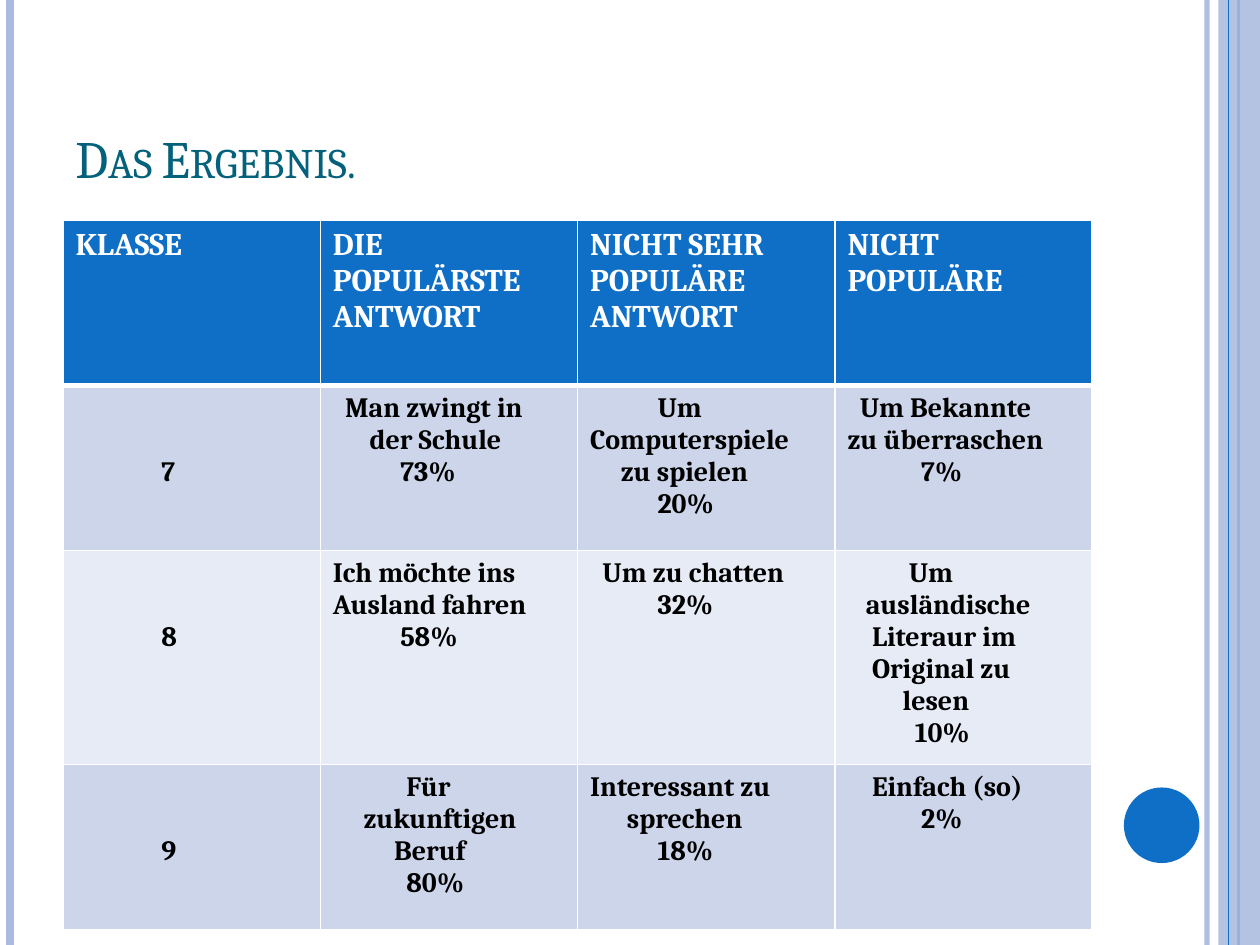
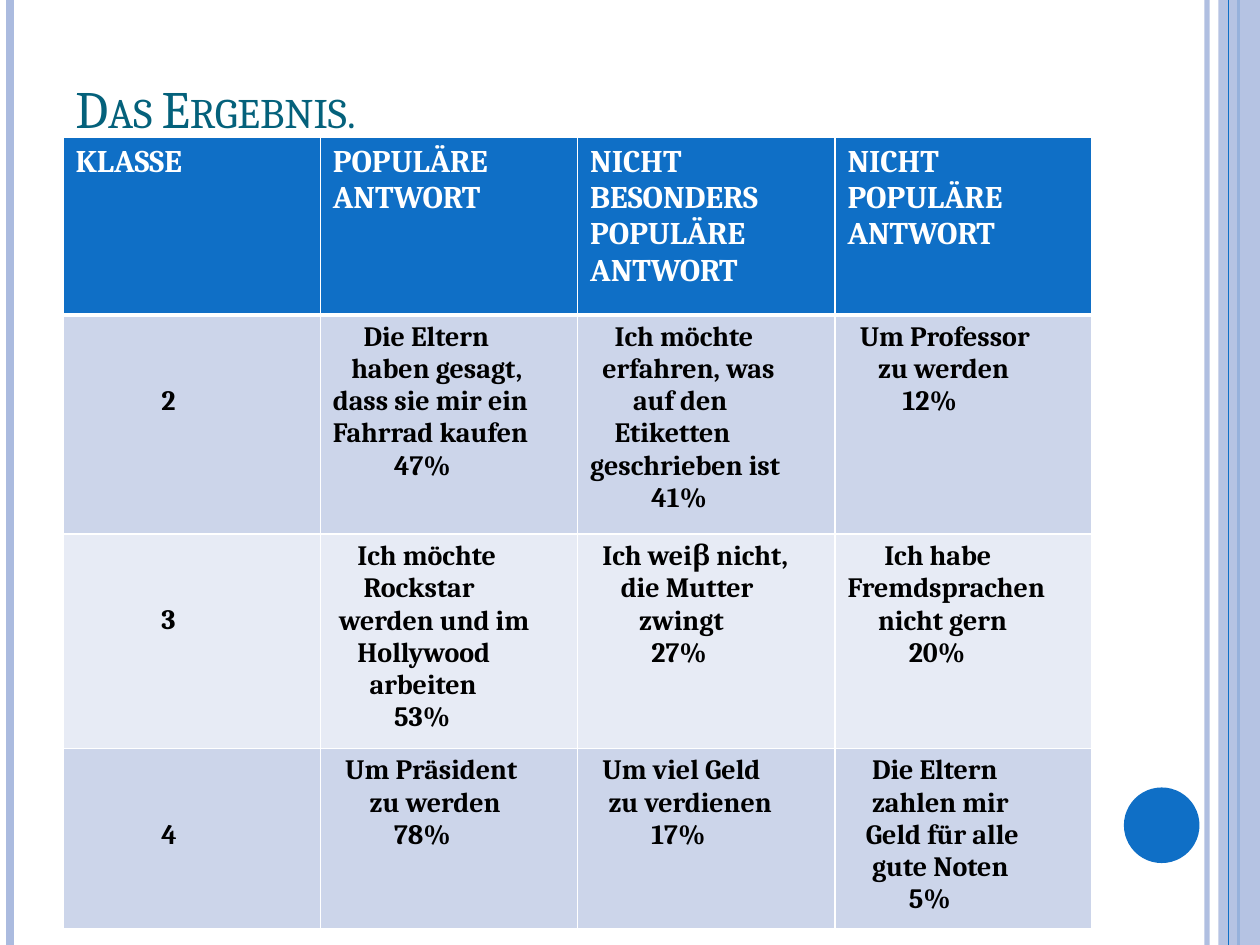
from lxml import etree
from pptx import Presentation
from pptx.dml.color import RGBColor
from pptx.enum.shapes import MSO_CONNECTOR, MSO_SHAPE
from pptx.enum.text import MSO_ANCHOR
from pptx.oxml.ns import qn
from pptx.util import Inches, Pt

STRAIGHT = MSO_CONNECTOR.STRAIGHT
RECTANGLE, OVAL = MSO_SHAPE.RECTANGLE, MSO_SHAPE.OVAL
BOTTOM = MSO_ANCHOR.BOTTOM

COLORS = {
    "blue": "0F6FC6", "pale_blue": "ABBBDF", "title": "04617B",
    "white": "FFFFFF", "black": "000000", "band_dark": "CCD5EA", "band_light": "E7EBF5",
}
FONT = "Cambria"
TITLE = "Das Ergebnis."
SLIDE_W, SLIDE_H = 10, 7.5
LEFT, CONTENT_W, TITLE_TOP = 0.5, 8.17, 0.3
INDENT_STEP = 3.5
GRADE_INDENT, GRADE_MARGIN_TOP = 14, 0.56

# Each answer line is (indent steps, text).
RESULTS = [
    {
        "title_height": 1.25,
        "table_top": 1.75,
        "row_heights": [1.31, 1.31, 1.31, 1.31],
        "header": ["KLASSE", "DIE POPULÄRSTE ANTWORT", "NICHT SEHR POPULÄRE ANTWORT",
                   "NICHT POPULÄRE"],
        "grades": [
            ("7", [
                [(2, "Man zwingt in"), (6, "der Schule"), (11, "73%")],
                [(11, "Um Computerspiele"), (5, "zu spielen"), (11, "20%")],
                [(2, "Um Bekannte"), (0, "zu überraschen"), (12, "7%")],
            ]),
            ("8", [
                [(0, "Ich möchte ins Ausland fahren"), (11, "58%")],
                [(2, "Um zu chatten"), (11, "32%")],
                [(10, "Um"), (3, "ausländische"), (4, "Literaur im"),
                 (4, "Original zu"), (9, "lesen"), (11, "10%")],
            ]),
            ("9", [
                [(12, "Für"), (5, "zukunftigen"), (10, "Beruf"), (12, "80%")],
                [(0, "Interessant zu"), (6, "sprechen"), (11, "18%")],
                [(4, "Einfach (so)"), (12, "2%")],
            ]),
        ],
    },
    {
        "title_height": 0.85,
        "table_top": 1.09,
        "row_heights": [1.41, 1.74, 1.38, 1.29],
        "header": ["KLASSE", "POPULÄRE ANTWORT", "NICHT BESONDERS POPULÄRE ANTWORT",
                   "NICHT POPULÄRE ANTWORT"],
        "grades": [
            ("2", [
                [(5, "Die Eltern"), (3, "haben gesagt, dass sie mir ein Fahrrad kaufen"),
                 (10, "47%")],
                [(4, "Ich möchte"), (2, "erfahren, was"), (7, "auf den"),
                 (4, "Etiketten geschrieben ist"), (10, "41%")],
                [(2, "Um Professor"), (5, "zu werden"), (9, "12%")],
            ]),
            ("3", [
                [(4, "Ich möchte"), (5, "Rockstar"), (1, "werden und im"),
                 (4, "Hollywood"), (6, "arbeiten"), (10, "53%")],
                [(2, "Ich weiβ nicht,"), (5, "die Mutter"), (8, "zwingt"), (10, "27%")],
                [(6, "Ich habe Fremdsprachen"), (5, "nicht gern"), (10, "20%")],
            ]),
            ("4", [
                [(2, "Um Präsident"), (6, "zu werden"), (10, "78%")],
                [(2, "Um viel Geld"), (3, "zu verdienen"), (10, "17%")],
                [(4, "Die Eltern"), (4, "zahlen mir"), (3, "Geld für alle"),
                 (4, "gute Noten"), (10, "5%")],
            ]),
        ],
    },
]


def rgb(name):
    return RGBColor.from_string(COLORS[name])


def set_alpha(fill, percent):
    color = fill._xPr.find(qn("a:solidFill"))[0]
    etree.SubElement(color, qn("a:alpha")).set("val", str(percent * 1000))


def add_stripe(slide, x, width, color, alpha=100):
    stripe = slide.shapes.add_connector(STRAIGHT, Inches(x), 0, Inches(x), Inches(SLIDE_H))
    stripe.line.width = Pt(width)
    stripe.line.color.rgb = rgb(color)
    if alpha < 100:
        set_alpha(stripe.line.fill, alpha)
    etree.SubElement(stripe._element.spPr, qn("a:effectLst"))


def add_block(slide, kind, box, color):
    block = slide.shapes.add_shape(kind, *map(Inches, box))
    block.shadow.inherit = False
    block.fill.solid()
    block.fill.fore_color.rgb = rgb(color)
    block.line.fill.background()
    return block


def add_frame(slide):
    add_stripe(slide, 9.58, 3, "pale_blue", 93)
    add_stripe(slide, 0.08, 4.5, "pale_blue")
    add_stripe(slide, 9.83, 1.5, "blue")
    band = add_block(slide, RECTANGLE, (9.67, 0, 0.33, SLIDE_H), "pale_blue")
    set_alpha(band.fill, 87)
    add_stripe(slide, 9.75, 0.75, "blue")
    add_block(slide, OVAL, (8.92, 6.25, 0.6, 0.6), "blue")


def style_runs(paragraph, size, color, bold=False):
    for run in paragraph.runs:
        run.font.name = FONT
        run.font.size = Pt(size)
        run.font.bold = bold
        run.font.color.rgb = rgb(color)


def add_title(slide, height):
    heading = slide.shapes.add_textbox(*map(Inches, (LEFT, TITLE_TOP, CONTENT_W, height)))
    frame = heading.text_frame
    frame.word_wrap = True
    frame.vertical_anchor = BOTTOM
    frame.text = TITLE
    paragraph = frame.paragraphs[0]
    style_runs(paragraph, 30, "title")
    paragraph.runs[0]._r.get_or_add_rPr().set("cap", "small")


def set_borders(cell, top, bottom):
    properties = cell._tc.get_or_add_tcPr()
    for side, width in (("L", 1), ("R", 1), ("T", top), ("B", bottom)):
        border = etree.SubElement(properties, qn(f"a:ln{side}"), w=str(Pt(width)))
        fill = etree.SubElement(border, qn("a:solidFill"))
        etree.SubElement(fill, qn("a:srgbClr"), val=COLORS["white"])


def fill_cell(cell, lines, size, color, background, top=1, bottom=1):
    set_borders(cell, top, bottom)
    cell.fill.solid()
    cell.fill.fore_color.rgb = rgb(background)
    cell.text_frame.text = "\n".join(text for _, text in lines)
    for paragraph, (steps, _) in zip(cell.text_frame.paragraphs, lines):
        properties = paragraph._p.get_or_add_pPr()
        properties.set("marL", "0")
        properties.set("indent", str(Pt(steps * INDENT_STEP)))
        style_runs(paragraph, size, color, bold=True)


def add_results(slide, result):
    heights, header = result["row_heights"], result["header"]
    box = (LEFT, result["table_top"], CONTENT_W, sum(heights))
    table = slide.shapes.add_table(len(heights), len(header), *map(Inches, box)).table
    table.horz_banding = False
    for row, height in zip(table.rows, heights):
        row.height = Inches(height)
    for column, label in enumerate(header):
        fill_cell(table.cell(0, column), [(0, label)], 18, "white", "blue", bottom=3)
    for row, (grade, answers) in enumerate(result["grades"], 1):
        background = "band_dark" if row % 2 else "band_light"
        top = 3 if row == 1 else 1
        for column, lines in enumerate([[(GRADE_INDENT, grade)]] + answers):
            fill_cell(table.cell(row, column), lines, 16, "black", background, top)
        table.cell(row, 0).margin_top = Inches(GRADE_MARGIN_TOP)


def main():
    deck = Presentation()
    deck.slide_width, deck.slide_height = Inches(SLIDE_W), Inches(SLIDE_H)
    for result in RESULTS:
        slide = deck.slides.add_slide(deck.slide_layouts[6])
        slide.background.fill.solid()
        slide.background.fill.fore_color.rgb = rgb("white")
        add_frame(slide)
        add_title(slide, result["title_height"])
        add_results(slide, result)
    deck.save("out.pptx")


if __name__ == "__main__":
    main()
